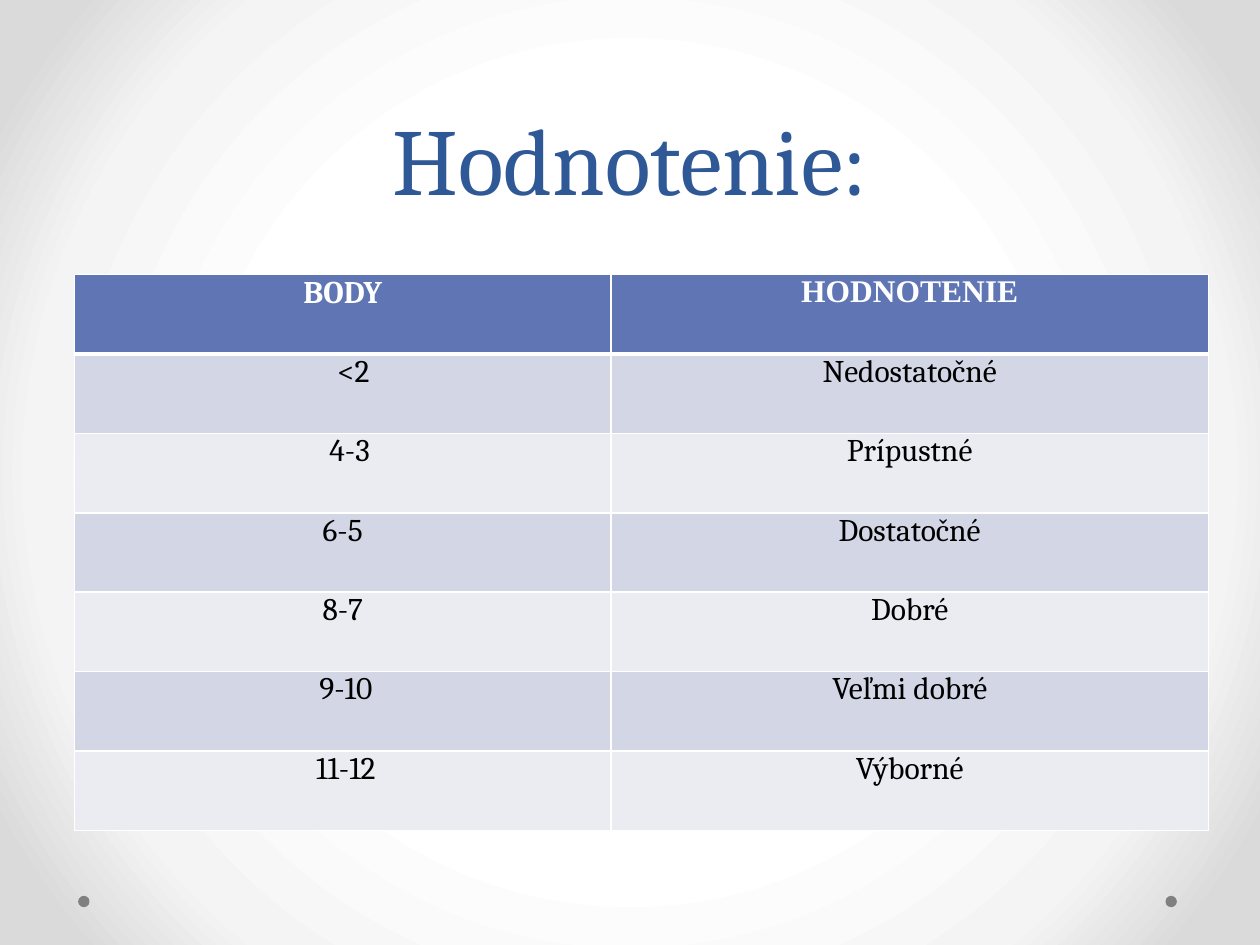
from dataclasses import dataclass

from lxml import etree
from pptx import Presentation
from pptx import util as u
from pptx.dml.color import RGBColor
from pptx.enum import shapes, text
from pptx.oxml import ns


@dataclass(frozen=True)
class Theme:
    title: str = "2F5897"
    header: str = "6076B4"
    bands: tuple = ("D2D6E5", "EAECF2")
    white: str = "FFFFFF"
    black: str = "000000"
    dot: str = "808080"
    glow: tuple = ((50, "FFFFFF"), (76, "F4F4F4"), (92, "DADADA"))
    font: str = "Cambria"
    header_font: str = "Times New Roman"
    title_size: int = 54
    title_leading: int = 58
    cell_size: int = 18


THEME = Theme()
HEADERS = (("BODY", THEME.font), ("HODNOTENIE", THEME.header_font))
GRADES = (
    ("<2", "Nedostatočné", 0.17),
    ("4-3", "Prípustné", 0.11),
    ("6-5", "Dostatočné", 0),
    ("8-7", "Dobré", 0),
    ("9-10", "Veľmi dobré", 0.05),
    ("11-12", "Výborné", 0.05),
)


def add_child(parent, tag, **attributes):
    return etree.SubElement(parent, ns.qn(tag), attributes)


def write(frame, words, size, color, font=THEME.font, bold=False, leading=None):
    para = frame.paragraphs[0]
    para.alignment = text.PP_ALIGN.CENTER
    if leading:
        para.line_spacing = u.Pt(leading)
    span = para.add_run()
    span.text = words
    span.font.name = font
    span.font.size = u.Pt(size)
    span.font.bold = bold
    span.font.color.rgb = RGBColor.from_string(color)


def paint_background(page):
    page.background.fill.gradient()
    gradient = page.element.find(".//" + ns.qn("a:gradFill"))
    for child in list(gradient):
        gradient.remove(child)
    stops = add_child(gradient, "a:gsLst")
    for position, color in THEME.glow:
        stop = add_child(stops, "a:gs", pos=str(position * 1000))
        add_child(stop, "a:srgbClr", val=color)
    circle = add_child(gradient, "a:path", path="circle")
    add_child(circle, "a:fillToRect", l="50000", t="50000", r="50000", b="50000")


def add_dots(page, left, top, width, size):
    for x in (left, left + width - size):
        dot = page.shapes.add_shape(
            shapes.MSO_SHAPE.OVAL, u.Inches(x), u.Inches(top), u.Inches(size), u.Inches(size))
        dot.shadow.inherit = False
        dot.fill.solid()
        dot.fill.fore_color.rgb = RGBColor.from_string(THEME.dot)
        dot.line.fill.background()


def add_title(page, left, top, width, height):
    box = page.shapes.add_textbox(
        u.Inches(left), u.Inches(top), u.Inches(width), u.Inches(height))
    frame = box.text_frame
    frame.word_wrap = True
    frame.vertical_anchor = text.MSO_ANCHOR.BOTTOM
    write(frame, "Hodnotenie:", THEME.title_size, THEME.title, leading=THEME.title_leading)


def draw_borders(cell, top, bottom):
    properties = cell._tc.get_or_add_tcPr()
    for side, points in (("L", 1), ("R", 1), ("T", top), ("B", bottom)):
        line = add_child(properties, f"a:ln{side}", w=str(u.Pt(points)))
        add_child(add_child(line, "a:solidFill"), "a:srgbClr", val=THEME.white)


def style_cell(cell, fill, indent=0, top=1, bottom=1):
    cell.margin_left = u.Inches(0.07 + indent)
    cell.margin_right = u.Inches(0.07)
    cell.margin_top = cell.margin_bottom = 0
    draw_borders(cell, top, bottom)
    cell.fill.solid()
    cell.fill.fore_color.rgb = RGBColor.from_string(fill)


def add_grades(page, left, top, widths, row_height):
    count = len(GRADES) + 1
    table = page.shapes.add_table(
        count, len(widths), u.Inches(left), u.Inches(top),
        u.Inches(sum(widths)), u.Inches(row_height * count)).table
    for column, width in zip(table.columns, widths):
        column.width = u.Inches(width)
    for row in table.rows:
        row.height = u.Inches(row_height)
    for index, (words, font) in enumerate(HEADERS):
        cell = table.cell(0, index)
        style_cell(cell, THEME.header, bottom=3)
        write(cell.text_frame, words, THEME.cell_size, THEME.white, font=font, bold=True)
    for number, (points, grade, indent) in enumerate(GRADES):
        for index, (words, shift) in enumerate(((points, indent), (grade, 0))):
            cell = table.cell(number + 1, index)
            style_cell(cell, THEME.bands[number % 2], shift, top=1 if number else 3)
            write(cell.text_frame, words, THEME.cell_size, THEME.black)


def main():
    deck = Presentation()
    deck.slide_width, deck.slide_height = u.Inches(10), u.Inches(7.5)
    page = deck.slides.add_slide(deck.slide_layouts[6])
    paint_background(page)
    add_dots(page, 0.62, 7.11, 8.72, 0.09)
    add_title(page, 0.5, 0, 9, 1.75)
    add_grades(page, 0.59, 2.18, (4.26, 4.74), 0.63)
    deck.save("out.pptx")


if __name__ == "__main__":
    main()
